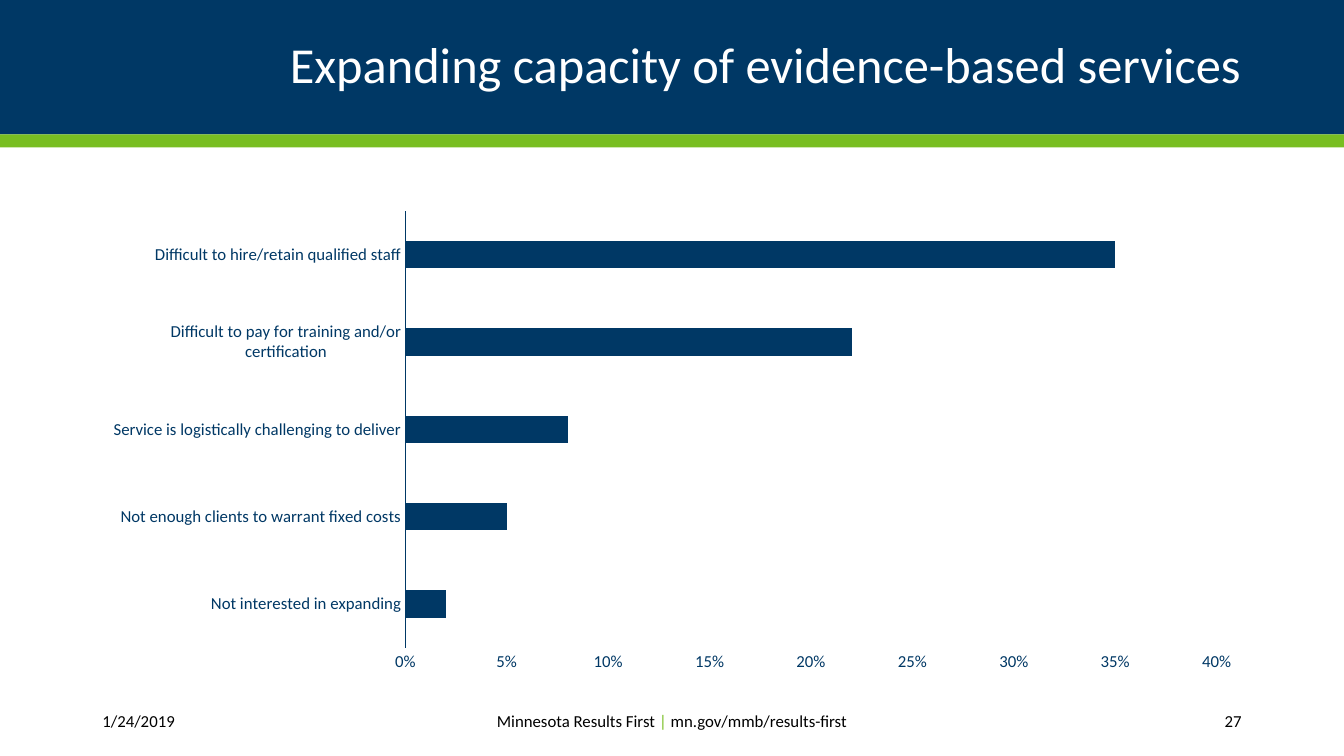
from lxml import etree
from pptx import Presentation
from pptx.chart.data import CategoryChartData
from pptx.dml.color import RGBColor
from pptx.enum.chart import XL_CHART_TYPE, XL_TICK_MARK
from pptx.enum.shapes import MSO_SHAPE
from pptx.enum.text import MSO_ANCHOR, PP_ALIGN
from pptx.oxml.ns import qn
from pptx.util import Pt

COLORS = {"navy": "003865", "green": "78BE21", "white": "FFFFFF", "black": "000000"}
WIDTH, HEIGHT = 960, 540
MARGIN = 66
CONTENT_WIDTH = WIDTH - 2 * MARGIN
FOOTER_TOP, FOOTER_HEIGHT = 500.4, 28.8

BARRIERS = {
    "Not interested in expanding": 0.02,
    "Not enough clients to warrant fixed costs": 0.05,
    "Service is logistically challenging to deliver": 0.08,
    "Difficult to pay for training and/or certification": 0.22,
    "Difficult to hire/retain qualified staff": 0.35,
}


class SlideBuilder:
    """Holds the style and the current slide."""

    font_name = "Calibri"
    title_size = 36
    body_size = 12

    def __init__(self, slide):
        self.slide = slide

    def color(self, name):
        return RGBColor.from_string(COLORS[name])

    def style_font(self, font, size, color):
        font.name = self.font_name
        font.size = Pt(size)
        font.bold = False
        font.color.rgb = self.color(color)

    def band(self, top, height, color):
        shape = self.slide.shapes.add_shape(
            MSO_SHAPE.RECTANGLE, Pt(0), Pt(top), Pt(WIDTH), Pt(height))
        shape.shadow.inherit = False
        shape.fill.solid()
        shape.fill.fore_color.rgb = self.color(color)
        shape.line.fill.background()

    def title(self, text, top, height):
        title = self.slide.shapes.title
        title.left, title.top = Pt(MARGIN), Pt(top)
        title.width, title.height = Pt(CONTENT_WIDTH), Pt(height)
        frame = title.text_frame
        frame.text = text
        frame.vertical_anchor = MSO_ANCHOR.MIDDLE
        paragraph = frame.paragraphs[0]
        paragraph.alignment = PP_ALIGN.RIGHT
        paragraph.line_spacing = 0.9
        self.style_font(paragraph.runs[0].font, self.title_size, "white")
        # Bring the title in front of the banner
        self.slide.shapes._spTree.append(title._element)

    def footer(self, left, width, alignment, *parts):
        box = self.slide.shapes.add_textbox(
            Pt(left), Pt(FOOTER_TOP), Pt(width), Pt(FOOTER_HEIGHT))
        frame = box.text_frame
        frame.word_wrap = True
        frame.vertical_anchor = MSO_ANCHOR.MIDDLE
        paragraph = frame.paragraphs[0]
        paragraph.alignment = alignment
        for text, color in parts:
            run = paragraph.add_run()
            run.text = text
            self.style_font(run.font, self.body_size, color)

    def bar_chart(self, values, top, height):
        data = CategoryChartData(number_format="0%")
        data.categories = list(values)
        data.add_series("Series 1", list(values.values()))
        chart = self.slide.shapes.add_chart(
            XL_CHART_TYPE.BAR_CLUSTERED, Pt(MARGIN), Pt(top),
            Pt(CONTENT_WIDTH), Pt(height), data).chart
        chart.has_legend = False
        chart.has_title = False
        self.style_font(chart.font, 10, "navy")

        plot = chart.plots[0]
        plot.gap_width = 219
        plot.vary_by_categories = False
        fill = plot.series[0].format.fill
        fill.solid()
        fill.fore_color.rgb = self.color("navy")

        for axis in (chart.category_axis, chart.value_axis):
            axis.major_tick_mark = XL_TICK_MARK.NONE
            axis.minor_tick_mark = XL_TICK_MARK.NONE
            axis.has_major_gridlines = False
            self.style_font(axis.tick_labels.font, self.body_size, "navy")
        category_line = chart.category_axis.format.line
        category_line.width = Pt(0.75)
        category_line.color.rgb = self.color("navy")

        value_axis = chart.value_axis
        value_axis.format.line.fill.background()
        value_axis.minimum_scale, value_axis.maximum_scale = 0, 0.4
        value_axis.major_unit = 0.05
        value_axis.tick_labels.number_format = "0%"
        value_axis.tick_labels.number_format_is_linked = False
        self.place_plot(chart, x=0.27, y=0.02, w=0.7, h=0.91)

    def place_plot(self, chart, **fractions):
        plot_area = chart._chartSpace.chart.plotArea
        for old_layout in plot_area.findall(qn("c:layout")):
            plot_area.remove(old_layout)
        layout = etree.Element(qn("c:layout"))
        manual = etree.SubElement(layout, qn("c:manualLayout"))
        settings = {"layoutTarget": "inner", "xMode": "edge", "yMode": "edge", **fractions}
        for name, value in settings.items():
            etree.SubElement(manual, qn(f"c:{name}")).set("val", str(value))
        plot_area.insert(0, layout)


def main():
    presentation = Presentation()
    presentation.slide_width, presentation.slide_height = Pt(WIDTH), Pt(HEIGHT)
    slide = presentation.slides.add_slide(presentation.slide_layouts[5])
    builder = SlideBuilder(slide)

    # Banner and title
    builder.band(0, 96, "navy")
    builder.band(96, 9.2, "green")
    builder.title("Expanding capacity of evidence-based services", 12, 72)

    # Barriers chart
    builder.bar_chart(BARRIERS, 144, 342.7)

    # Footer
    builder.footer(MARGIN, 107, PP_ALIGN.LEFT, ("1/24/2019", "black"))
    builder.footer(260, 440, PP_ALIGN.CENTER,
                   ("Minnesota Results First ", "black"), ("|", "green"),
                   (" mn.gov/mmb/results-first", "black"))
    builder.footer(779, 115, PP_ALIGN.RIGHT, ("27", "black"))

    presentation.save("out.pptx")


if __name__ == "__main__":
    main()
